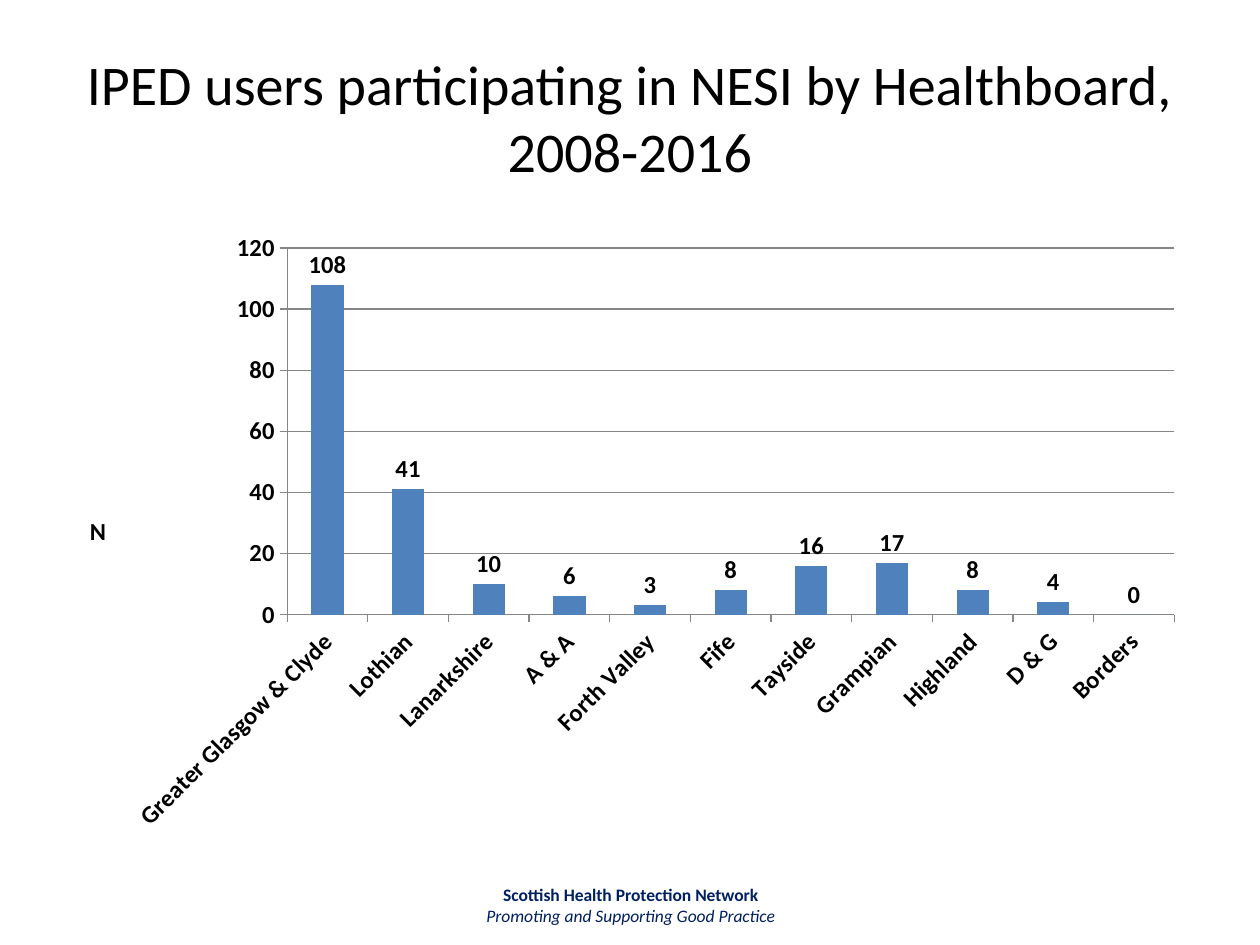
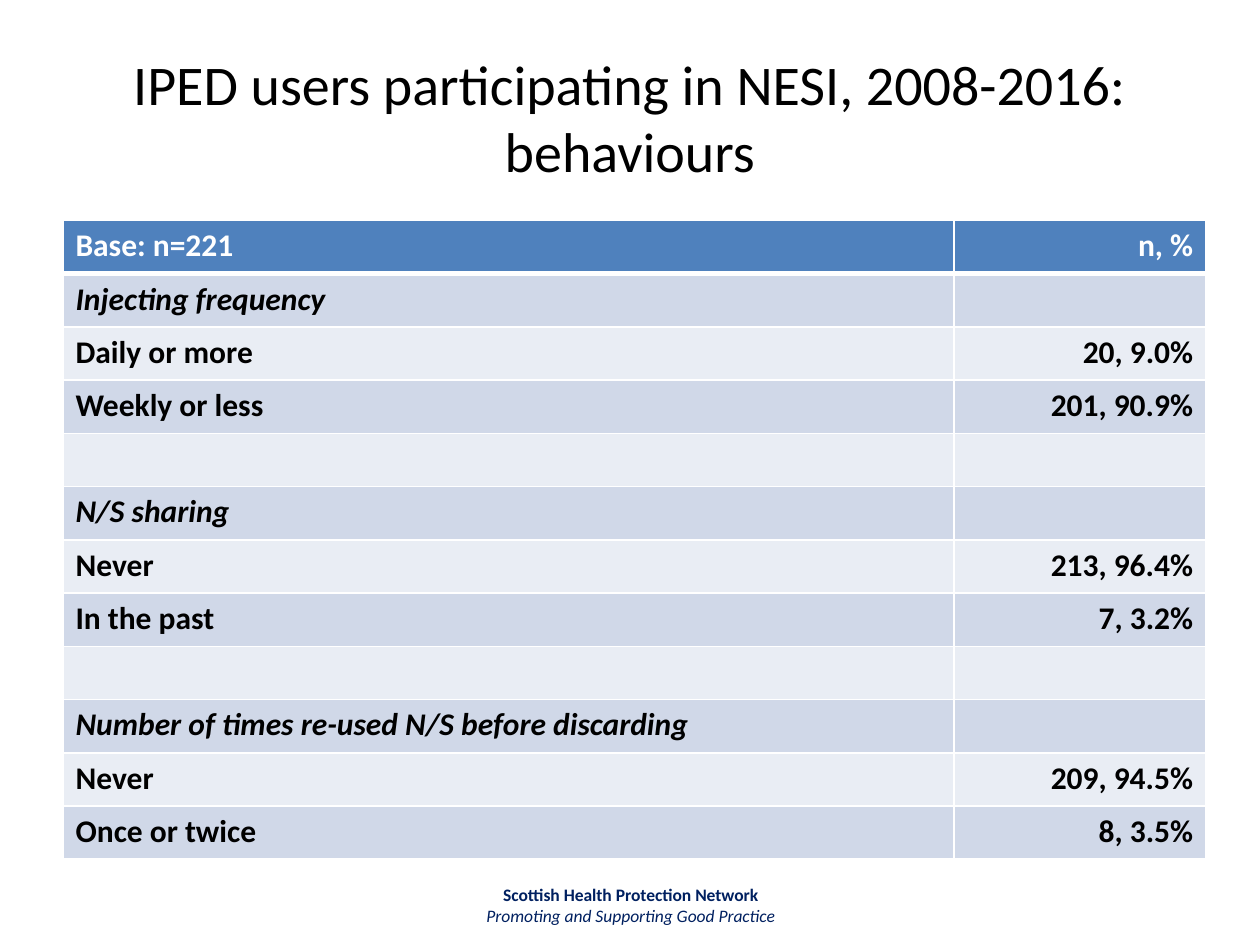
import dataclasses
import typing

import pptx
import pptx.chart.data
import pptx.dml.color
import pptx.enum.chart
import pptx.enum.text
import pptx.oxml
import pptx.oxml.ns
import pptx.util

Inches = pptx.util.Inches
Pt = pptx.util.Pt
Align = pptx.enum.text.PP_ALIGN
Anchor = pptx.enum.text.MSO_ANCHOR

FONT = "Calibri"
COLORS = {
    "ink": "000000",
    "navy": "002060",
    "blue": "4F81BD",
    "band": "D0D8E8",
    "pale": "E9EDF4",
    "white": "FFFFFF",
    "grid": "868686",
}


@dataclasses.dataclass
class Style:
    size: int
    color: str = "ink"
    bold: bool = False
    italic: bool = False


@dataclasses.dataclass
class Line:
    text: str
    style: Style


@dataclasses.dataclass
class Box:
    left: float
    top: float
    width: float
    height: float

    def place(self) -> list:
        return [Inches(v) for v in dataclasses.astuple(self)]


@dataclasses.dataclass
class Row:
    label: str = ""
    value: str = ""
    italic: bool = False


TITLE = Box(0.5, 0.3, 9, 1.25)
FOOTER = Box(3.42, 6.97, 3.17, 0.4)
CHART = Box(0.5, 1.75, 9, 4.95)
TABLE = Box(0.5, 1.75, 9.07, 5.07)
COLUMNS = (7.07, 2.0)

CREDIT = [
    Line("Scottish Health Protection Network", Style(10, "navy", bold=True)),
    Line("Promoting and Supporting Good Practice", Style(10, "navy", italic=True)),
]

BOARDS = {
    "Greater Glasgow & Clyde": 108,
    "Lothian": 41,
    "Lanarkshire": 10,
    "A & A": 6,
    "Forth Valley": 3,
    "Fife": 8,
    "Tayside": 16,
    "Grampian": 17,
    "Highland": 8,
    "D & G": 4,
    "Borders": 0,
}

ROWS = [
    Row("Base: n=221", "n, %"),
    Row("Injecting frequency", italic=True),
    Row("Daily or more", "20, 9.0%"),
    Row("Weekly or less", "201, 90.9%"),
    Row(),
    Row("N/S sharing", italic=True),
    Row("Never", "213, 96.4%"),
    Row("In the past", "7, 3.2%"),
    Row(),
    Row("Number of times re-used N/S before discarding", italic=True),
    Row("Never", "209, 94.5%"),
    Row("Once or twice", "8, 3.5%"),
]


def tint(name: str) -> pptx.dml.color.RGBColor:
    return pptx.dml.color.RGBColor.from_string(COLORS[name])


def set_font(font: typing.Any, style: Style) -> None:
    font.name = FONT
    font.size = Pt(style.size)
    font.bold = style.bold
    font.italic = style.italic
    font.color.rgb = tint(style.color)


def write(par: typing.Any, line: Line, align: Align) -> None:
    par.text = line.text
    par.alignment = align
    for run in par.runs:
        set_font(run.font, line.style)


def add_text(slide: typing.Any, box: Box, lines: list[Line], anchor: Anchor) -> None:
    frame = slide.shapes.add_textbox(*box.place()).text_frame
    frame.word_wrap = True
    frame.vertical_anchor = anchor
    frame.text = "\n".join(line.text for line in lines)
    for par, line in zip(frame.paragraphs, lines):
        write(par, line, Align.CENTER)


def add_slide(deck: typing.Any, title: str) -> typing.Any:
    slide = deck.slides.add_slide(deck.slide_layouts[6])
    add_text(slide, FOOTER, CREDIT, Anchor.TOP)
    add_text(slide, TITLE, [Line(title, Style(32))], Anchor.MIDDLE)
    return slide


def add_chart(slide: typing.Any) -> None:
    data = pptx.chart.data.CategoryChartData(number_format="###0")
    data.categories = list(BOARDS)
    data.add_series("Series 1", list(BOARDS.values()))
    kind = pptx.enum.chart.XL_CHART_TYPE.COLUMN_CLUSTERED
    chart = slide.shapes.add_chart(kind, *CHART.place(), data).chart
    bold = Style(14, bold=True)
    set_font(chart.font, bold)
    chart.has_legend = False
    chart.has_title = False

    plot = chart.plots[0]
    plot.gap_width = 150
    plot.vary_by_categories = False
    fill = plot.series[0].format.fill
    fill.solid()
    fill.fore_color.rgb = tint("blue")
    plot.has_data_labels = True
    labels = plot.data_labels
    labels.show_value = True
    labels.position = pptx.enum.chart.XL_LABEL_POSITION.OUTSIDE_END
    labels.number_format = "###0"
    labels.number_format_is_linked = False
    set_font(labels.font, bold)

    count = chart.value_axis
    count.has_major_gridlines = True
    count.minimum_scale = 0
    count.maximum_scale = 120
    count.major_unit = 20
    board = chart.category_axis
    for part in (count, board, count.major_gridlines):
        part.format.line.color.rgb = tint("grid")
        part.format.line.width = Pt(0.75)
    for axis in (count, board):
        set_font(axis.tick_labels.font, bold)
        axis.major_tick_mark = pptx.enum.chart.XL_TICK_MARK.OUTSIDE
    turn = board._element.find(pptx.oxml.ns.qn("c:txPr")).find(pptx.oxml.ns.qn("a:bodyPr"))
    turn.set("rot", "-2700000")
    turn.set("vert", "horz")

    name = count.axis_title.text_frame
    write(name.paragraphs[0], Line("N", bold), Align.CENTER)
    body = name._txBody.find(pptx.oxml.ns.qn("a:bodyPr"))
    body.set("rot", "0")
    body.set("vert", "horz")


def add_edge(cell: typing.Any, side: str, width: float) -> None:
    space = pptx.oxml.ns.nsdecls("a")
    edge = pptx.oxml.parse_xml(
        f'<a:ln{side} {space} w="{Pt(width)}"><a:solidFill>'
        f'<a:srgbClr val="{COLORS["white"]}"/></a:solidFill></a:ln{side}>'
    )
    cell._tc.get_or_add_tcPr().append(edge)


def add_table(slide: typing.Any) -> None:
    table = slide.shapes.add_table(len(ROWS), len(COLUMNS), *TABLE.place()).table
    for column, width in zip(table.columns, COLUMNS):
        column.width = Inches(width)
    for i, row in enumerate(ROWS):
        table.rows[i].height = Inches(TABLE.height / len(ROWS))
        shade = "blue" if i == 0 else "band" if i % 2 else "pale"
        style = Style(18, "ink" if i else "white", True, row.italic)
        pairs = ((row.label, Align.LEFT), (row.value, Align.RIGHT))
        for cell, (text, align) in zip(table.rows[i].cells, pairs):
            for side in "LRTB":
                heavy = (i, side) in ((0, "B"), (1, "T"))
                add_edge(cell, side, 3 if heavy else 1)
            cell.fill.solid()
            cell.fill.fore_color.rgb = tint(shade)
            write(cell.text_frame.paragraphs[0], Line(text, style), align)


def main() -> None:
    deck = pptx.Presentation()
    deck.slide_width = Inches(10)
    deck.slide_height = Inches(7.5)
    add_chart(add_slide(deck, "IPED users participating in NESI by Healthboard, 2008-2016"))
    add_table(add_slide(deck, "IPED users participating in NESI, 2008-2016: behaviours"))
    deck.save("out.pptx")


if __name__ == "__main__":
    main()
